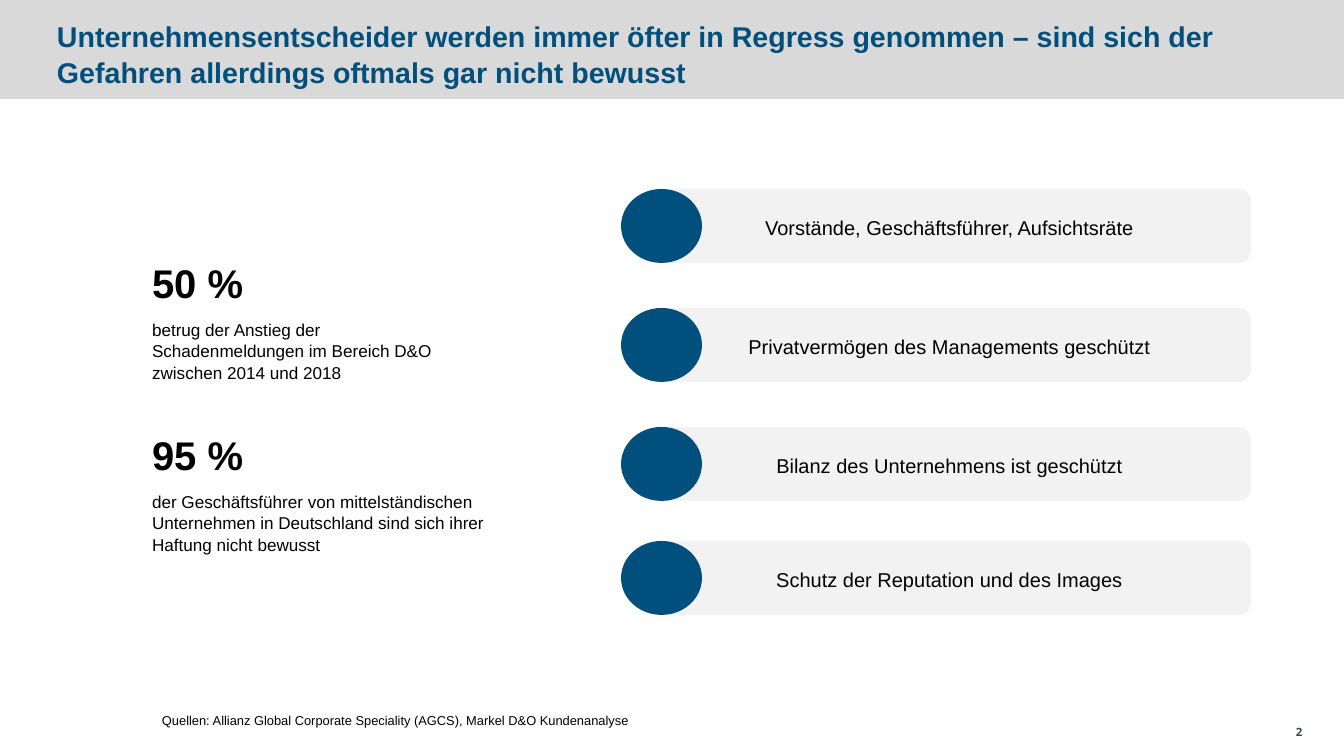
from pptx import Presentation
from pptx import util as u
from pptx.dml.color import RGBColor
from pptx.enum import shapes, text

PX = 8895  # EMU per px
COLORS = {"blue": "004F7C", "band": "D9D9D9", "bar": "F2F2F2",
          "text": "000000", "number": "3B454B"}


class SlideBuilder:
    """Holds the style and the slide being built."""
    font = "Arial"
    line_spacing = 1.05

    def __init__(self, width, height):
        self.deck = Presentation()
        self.deck.slide_width = u.Emu(width * PX)
        self.deck.slide_height = u.Emu(height * PX)
        self.slide = self.deck.slides.add_slide(self.deck.slide_layouts[5])

    def shape(self, kind, box, color):
        shape = self.slide.shapes.add_shape(kind, *(n * PX for n in box))
        shape.shadow.inherit = False
        shape.fill.solid()
        shape.fill.fore_color.rgb = RGBColor.from_string(COLORS[color])
        shape.line.fill.background()
        return shape

    def set_words(self, frame, words, size, color="text", bold=False, align="LEFT",
                  anchor="TOP", margins=(0, 0), wrap=True, font=None, spacing=None):
        frame.text = words
        frame.word_wrap = wrap
        frame.auto_size = text.MSO_AUTO_SIZE.NONE
        frame.vertical_anchor = text.MSO_ANCHOR[anchor]
        frame.margin_left = frame.margin_right = margins[0] * PX
        frame.margin_top = frame.margin_bottom = margins[1] * PX
        paragraph = frame.paragraphs[0]
        paragraph.alignment = text.PP_ALIGN[align]
        paragraph.line_spacing = spacing or self.line_spacing
        for run in paragraph.runs:
            run.font.name = font or self.font
            run.font.size = u.Pt(size)
            run.font.bold = bold
            run.font.color.rgb = RGBColor.from_string(COLORS[color])

    def label(self, box, words, size, **style):
        label = self.slide.shapes.add_textbox(*(n * PX for n in box))
        self.set_words(label.text_frame, words, size, **style)

    def title(self, box, words, size, **style):
        title = self.slide.shapes.title
        title.left, title.top, title.width, title.height = (n * PX for n in box)
        self.set_words(title.text_frame, words, size, **style)

    def send_to_back(self, shape):
        tree = shape.element.getparent()
        tree.remove(shape.element)
        tree.insert(2, shape.element)


def main():
    page = SlideBuilder(1344, 756)

    # Title on its band
    band = page.shape(shapes.MSO_SHAPE.RECTANGLE, (0, 0, 1344, 99), "band")
    page.send_to_back(band)
    page.title((57, 14, 1195, 80),
               "Unternehmensentscheider werden immer öfter in Regress genommen – "
               "sind sich der Gefahren allerdings oftmals gar nicht bewusst",
               20, color="blue", bold=True, anchor="BOTTOM", margins=(0, 5))

    # Key figures
    figures = [
        (253, "50 %", 317, "betrug der Anstieg der Schadenmeldungen im Bereich "
                           "D&O zwischen 2014 und 2018"),
        (425, "95 %", 354, "der Geschäftsführer von mittelständischen Unternehmen "
                           "in Deutschland sind sich ihrer Haftung nicht bewusst"),
    ]
    for top, figure, width, meaning in figures:
        page.label((152, top + 3, 317, 48), figure, 28, bold=True)
        page.label((152, top + 65, width, 63), meaning, 12)

    # Benefits
    benefits = [
        (189, "Vorstände, Geschäftsführer, Aufsichtsräte"),
        (308, "Privatvermögen des Managements geschützt"),
        (427, "Bilanz des Unternehmens ist geschützt"),
        (541, "Schutz der Reputation und des Images"),
    ]
    for top, benefit in benefits:
        page.shape(shapes.MSO_SHAPE.ROUNDED_RECTANGLE, (655, top, 596, 74), "bar")
        page.shape(shapes.MSO_SHAPE.OVAL, (621, top, 81, 74), "blue")
        page.label((702, top + 20, 495, 35), benefit, 14,
                   align="CENTER", margins=(10, 5))

    # Sources and page number
    page.label((152, 707, 827, 26),
               "Quellen: Allianz Global Corporate Speciality (AGCS), "
               "Markel D&O Kundenanalyse", 9, margins=(10, 5))
    page.label((1296, 725, 14, 13), "2", 8, color="number", bold=True,
               anchor="MIDDLE", wrap=False, font="Open Sans", spacing=1.0)

    page.deck.save("out.pptx")


if __name__ == "__main__":
    main()
